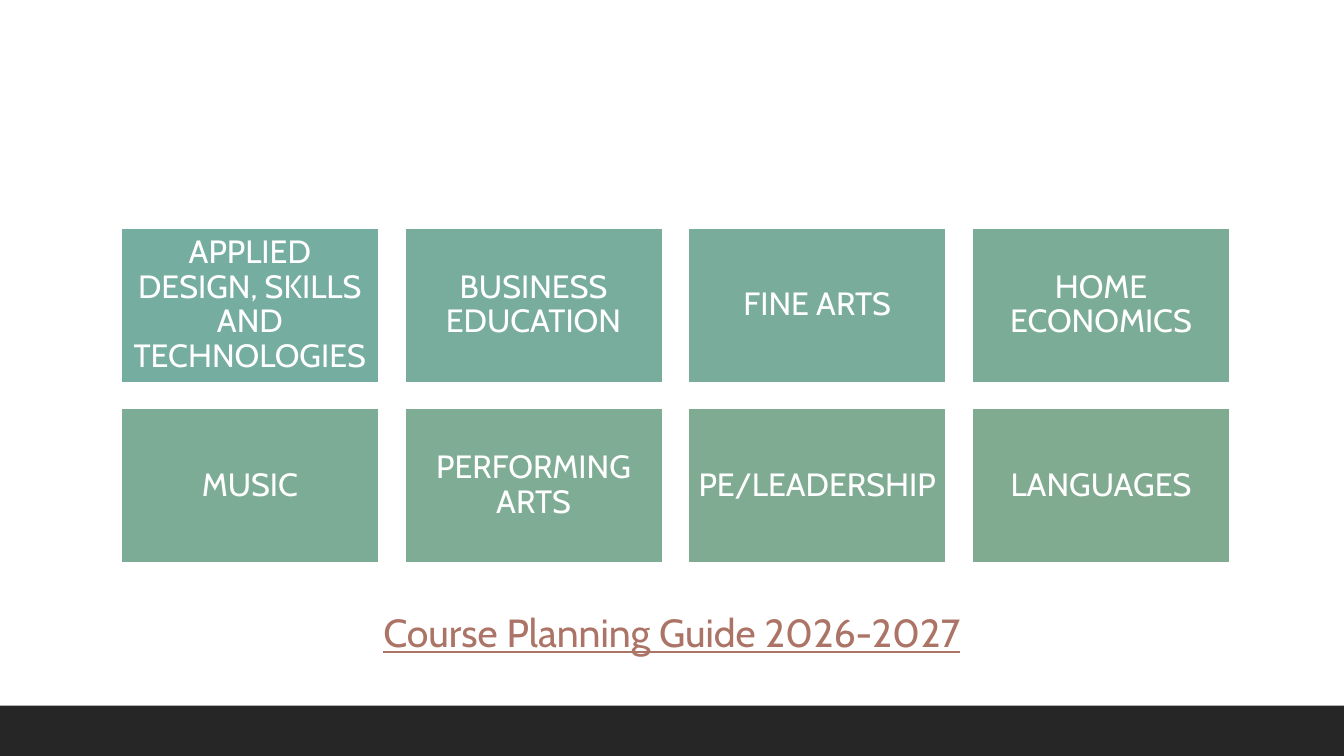
from dataclasses import dataclass

from pptx import Presentation
from pptx.dml.color import RGBColor
from pptx.enum.shapes import MSO_SHAPE
from pptx.enum.text import MSO_ANCHOR, PP_ALIGN
from pptx.util import Cm, Pt

RECTANGLE = MSO_SHAPE.RECTANGLE
MIDDLE = MSO_ANCHOR.MIDDLE
CENTER = PP_ALIGN.CENTER


@dataclass
class Theme:
    font: str = "Cabin"
    white: str = "FFFFFF"
    footer: str = "262626"
    guide: str = "AC7466"
    tile_size: float = 23
    guide_size: float = 28


theme = Theme()

SUBJECTS = [
    ("APPLIED DESIGN, SKILLS AND TECHNOLOGIES", "76ADA1"),
    ("BUSINESS EDUCATION", "78AD9E"),
    ("FINE ARTS", "79AC9B"),
    ("HOME ECONOMICS", "7BAC98"),
    ("MUSIC", "7CAC96"),
    ("PERFORMING ARTS", "7EAC94"),
    ("PE/LEADERSHIP", "7FAB92"),
    ("LANGUAGES", "81AB90"),
]
COLUMNS = 4
GRID_LEFT, GRID_TOP = 3.05, 5.74
TILE_WIDTH, TILE_HEIGHT, GAP = 6.5, 3.9, 0.65


def add_block(left, top, width, height, color):
    block = page.shapes.add_shape(RECTANGLE, Cm(left), Cm(top), Cm(width), Cm(height))
    block.shadow.inherit = False
    block.fill.solid()
    block.fill.fore_color.rgb = RGBColor.from_string(color)
    block.line.fill.background()
    return block


def write_centered(frame, text, size, color):
    frame.word_wrap = True
    frame.text = text
    para = frame.paragraphs[0]
    para.alignment = CENTER
    font = para.runs[0].font
    font.name = theme.font
    font.size = Pt(size)
    font.color.rgb = RGBColor.from_string(color)
    return para


# Slide and background
deck = Presentation()
deck.slide_width, deck.slide_height = Cm(33.87), Cm(19.05)
page = deck.slides.add_slide(deck.slide_layouts[6])
page.background.fill.solid()
page.background.fill.fore_color.rgb = RGBColor.from_string(theme.white)

# Footer band
add_block(0, 17.78, 33.87, 1.27, theme.footer)

# Subject tiles
for index, (subject, color) in enumerate(SUBJECTS):
    row, column = divmod(index, COLUMNS)
    left = GRID_LEFT + column * (TILE_WIDTH + GAP)
    top = GRID_TOP + row * (TILE_HEIGHT + GAP)
    tile = add_block(left, top, TILE_WIDTH, TILE_HEIGHT, color)
    tile.line.color.rgb = RGBColor.from_string(theme.white)
    tile.line.width = Pt(1.25)
    frame = tile.text_frame
    frame.vertical_anchor = MIDDLE
    frame.margin_left = frame.margin_right = Cm(0.24)
    frame.margin_top = frame.margin_bottom = Cm(0.24)
    para = write_centered(frame, subject, theme.tile_size, theme.white)
    para.line_spacing = 0.9

# Planning guide line
box = page.shapes.add_textbox(Cm(6.68), Cm(15.21), Cm(20.5), Cm(1.45))
para = write_centered(
    box.text_frame, "Course Planning Guide 2026-2027", theme.guide_size, theme.guide
)
para.runs[0].font.underline = True

deck.save("out.pptx")
